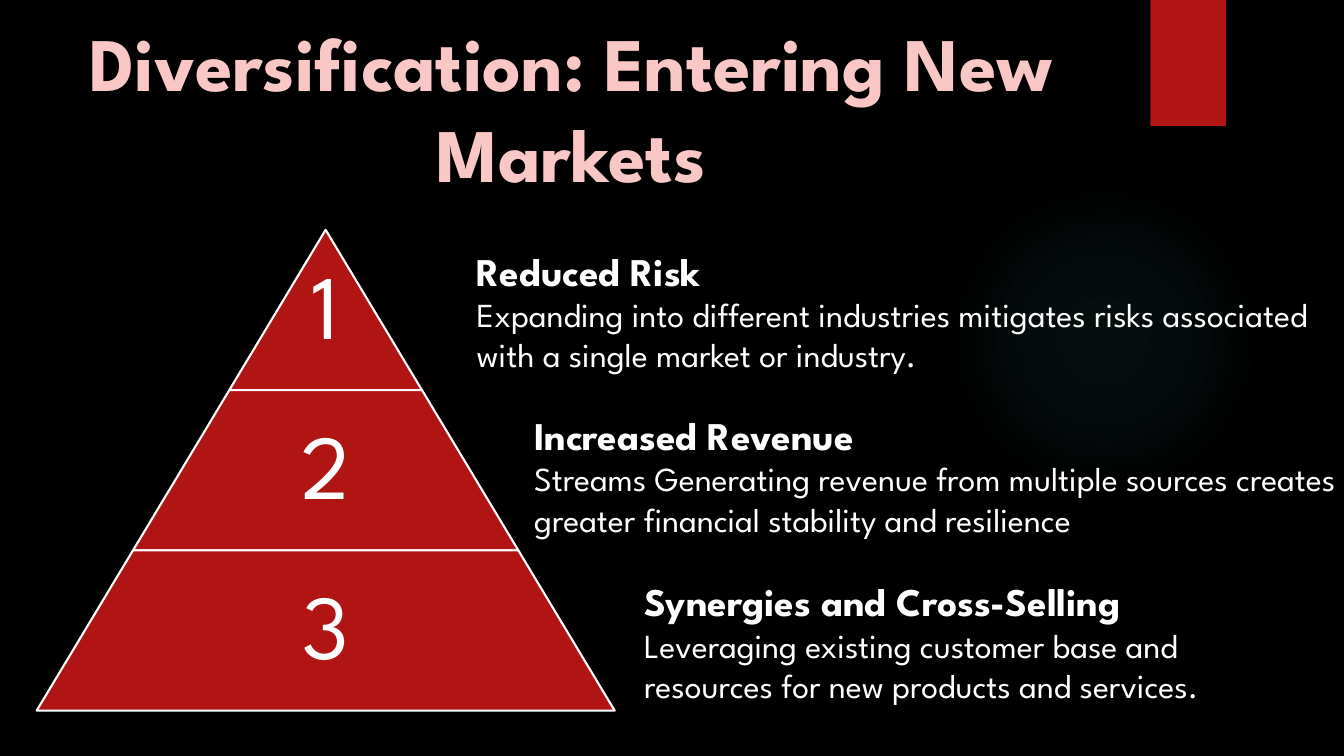
from dataclasses import dataclass

from lxml.etree import fromstring
from pptx import Presentation
from pptx.dml.color import RGBColor
from pptx.enum.shapes import MSO_SHAPE
from pptx.enum.text import MSO_ANCHOR, MSO_AUTO_SIZE, PP_ALIGN
from pptx.util import Inches, Pt

TITLE = "Diversification: Entering New Markets"
POINTS = [
    ("Reduced Risk",
     "Expanding into different industries mitigates risks associated with a single market or industry.",
     (4.63, 2.4, 8.7, 1.38)),
    ("Increased Revenue",
     "Streams Generating revenue from multiple sources creates greater financial stability and resilience",
     (5.2, 4.03, 9, 1.38)),
    ("Synergies and Cross-Selling",
     "Leveraging existing customer base and resources for new products and services.",
     (6.29, 5.68, 6.81, 1.38)),
]
GLOW = [(0, 7), (36, 6), (69, 0)]


@dataclass
class Theme:
    font: str = "League Spartan"
    back: str = "000000"
    red: str = "B01513"
    pink: str = "F9C7C6"
    white: str = "FFFFFF"
    teal: str = "50B9C1"
    title: int = 54
    digit: int = 65
    head: int = 28
    body: int = 24


theme = Theme()
deck = Presentation()
deck.slide_width, deck.slide_height = Inches(13.33), Inches(7.5)
slide = deck.slides.add_slide(deck.slide_layouts[6])
slide.background.fill.solid()
slide.background.fill.fore_color.rgb = RGBColor.from_string(theme.back)


def add_text(lines, box, color=theme.white, align=PP_ALIGN.LEFT,
             anchor=MSO_ANCHOR.TOP, grow=True, space=1.0):
    frame = slide.shapes.add_textbox(*map(Inches, box)).text_frame
    frame.word_wrap = True
    frame.vertical_anchor = anchor
    frame.auto_size = MSO_AUTO_SIZE.SHAPE_TO_FIT_TEXT if grow else MSO_AUTO_SIZE.NONE
    for i, (text, size, bold) in enumerate(lines):
        para = frame.add_paragraph() if i else frame.paragraphs[0]
        para.alignment = align
        para.line_spacing = space
        run = para.add_run()
        run.text = text
        run.font.name = theme.font
        run.font.size = Pt(size)
        run.font.bold = bold
        run.font.color.rgb = RGBColor.from_string(color)


def add_form(kind, box, line=None):
    form = slide.shapes.add_shape(kind, *map(Inches, box))
    form.shadow.inherit = False
    form.fill.solid()
    form.fill.fore_color.rgb = RGBColor.from_string(theme.red)
    if line:
        form.line.color.rgb = RGBColor.from_string(line)
        form.line.width = Pt(1.5)
    else:
        form.line.fill.background()
    return form


def add_glow(box):
    form = add_form(MSO_SHAPE.OVAL, box)
    stops = "".join(
        f'<a:gs pos="{pos * 1000}"><a:srgbClr val="{theme.teal}">'
        f'<a:alpha val="{alpha * 1000}"/></a:srgbClr></a:gs>'
        for pos, alpha in GLOW)
    grad = fromstring(
        '<a:gradFill xmlns:a="http://schemas.openxmlformats.org/drawingml/2006/main">'
        f'<a:gsLst>{stops}</a:gsLst><a:path path="circle">'
        '<a:fillToRect l="50000" t="50000" r="50000" b="50000"/></a:path></a:gradFill>')
    props = form.element.spPr
    props.replace(props.find("{*}solidFill"), grad)


def add_tiers(mid=3.23, top=2.28, high=1.59, slope=0.601):
    for i in range(len(POINTS)):
        wide = 2 * slope * high * (i + 1)
        box = (mid - wide / 2, top + i * high, wide, high)
        tier = add_form(MSO_SHAPE.TRAPEZOID, box, theme.white)
        tier.adjustments[0] = slope
        add_text([(str(i + 1), theme.digit, False)], box, align=PP_ALIGN.CENTER,
                 anchor=MSO_ANCHOR.MIDDLE, grow=False, space=0.9)


add_glow((9.41, 1.83, 3.08, 3.08))
add_form(MSO_SHAPE.RECTANGLE, (11.41, 0, 0.75, 1.25))
for head, body, box in POINTS:
    add_text([(head, theme.head, True), (body, theme.body, False)], box)
add_tiers()
add_text([(TITLE, theme.title, True)], (0, 0.11, 11.33, 1.92),
         color=theme.pink, align=PP_ALIGN.CENTER)
deck.save("out.pptx")
